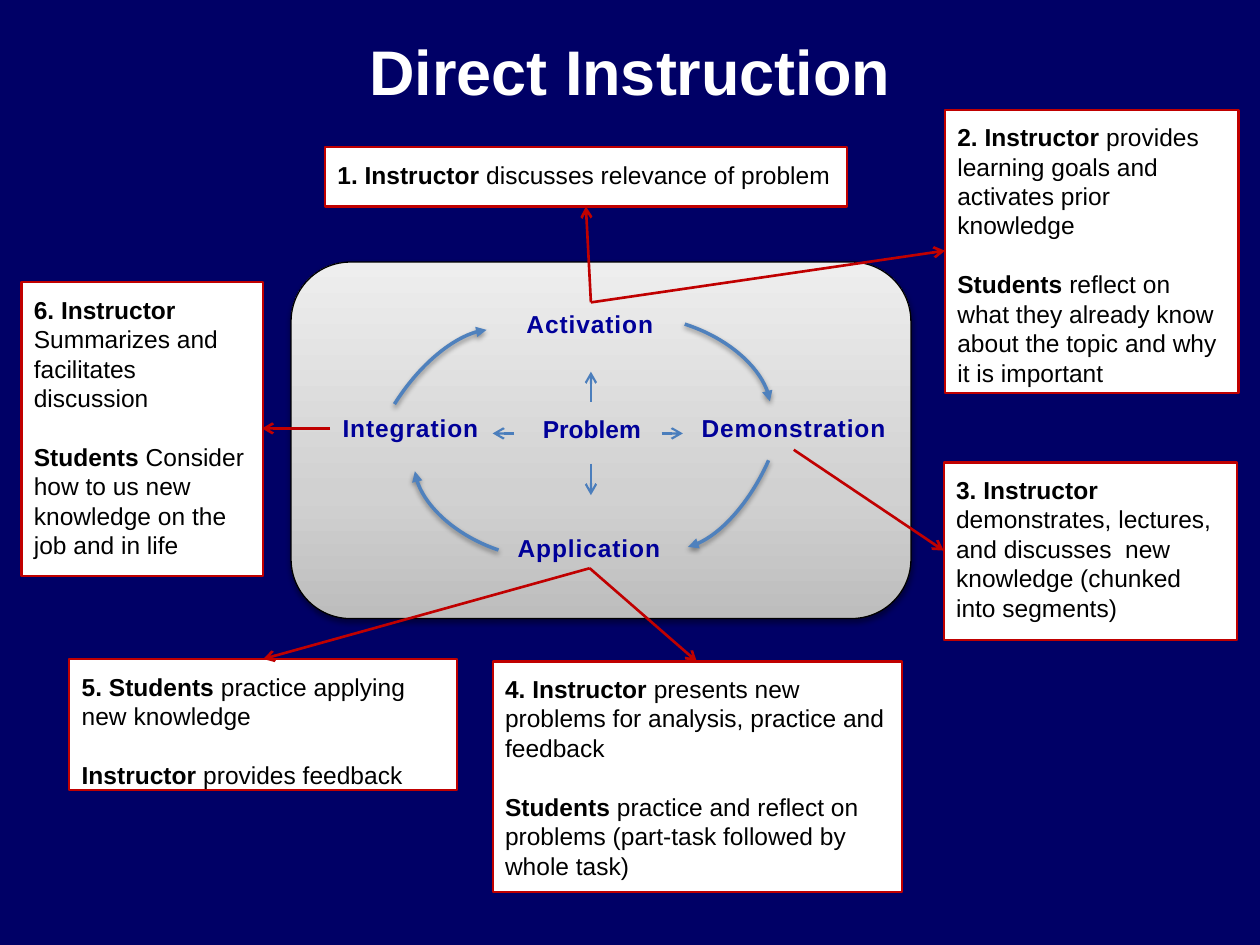
from pptx import Presentation
from pptx.dml.color import RGBColor
from pptx.enum.shapes import MSO_CONNECTOR as Connector, MSO_SHAPE as Shape
from pptx.enum.text import MSO_ANCHOR as Anchor, MSO_AUTO_SIZE as AutoSize, PP_ALIGN as Align
from pptx.oxml.ns import qn
from pptx.util import Inches, Pt
from lxml.etree import SubElement
from copy import deepcopy

NAVY = RGBColor(0x00, 0x00, 0x66)
WHITE = RGBColor(0xFF, 0xFF, 0xFF)
BLACK = RGBColor(0x00, 0x00, 0x00)
RED = RGBColor(0xC0, 0x00, 0x00)
LABEL_BLUE = RGBColor(0x00, 0x00, 0x99)
ARC_BLUE = RGBColor(0x4F, 0x81, 0xBD)
ARROW_BLUE = RGBColor(0x4B, 0x7E, 0xBC)
PANEL_STOPS = [
    (0, RGBColor(0xBD, 0xBD, 0xBD)),
    (0.35, RGBColor(0xD1, 0xD1, 0xD1)),
    (1, RGBColor(0xEE, 0xEE, 0xEE)),
]

STEPS = [
    ((2.58, 1.17, 4.14, 0.47), [("1. Instructor", " discusses relevance of problem")]),
    ((7.5, 0.87, 2.33, 2.25), [
        ("2. Instructor", " provides learning goals and activates prior knowledge"),
        ("Students", " reflect on what they already know about the topic and why it is important")]),
    ((0.17, 2.24, 1.92, 2.33), [
        ("6. Instructor", " Summarizes and facilitates discussion"),
        ("Students", " Consider how to us new knowledge on the job and in life")]),
    ((0.55, 5.23, 3.08, 1.04), [
        ("5. Students", " practice applying new knowledge"),
        ("Instructor", " provides feedback")]),
    ((3.91, 5.25, 3.25, 1.83), [
        ("4. Instructor", " presents new problems for analysis, practice and feedback"),
        ("Students", " practice and reflect on problems (part-task followed by whole task)")]),
    ((7.49, 3.67, 2.33, 1.41), [
        ("3. Instructor", " demonstrates, lectures, and discusses  new knowledge (chunked into segments)")]),
]
LABELS = [
    ("Problem", (4.21, 3.24, 0.98, 0.33), 0),
    ("Demonstration", (5.47, 3.23, 1.67, 0.34), 0.5),
    ("Application", (4.01, 4.18, 1.34, 0.34), 0.5),
    ("Activation", (4.08, 2.4, 1.22, 0.34), 0.5),
    ("Integration", (2.62, 3.23, 1.29, 0.34), 0.5),
]
ARCS = [
    ((4.54, 2.57, 1.61, 0.96), 21.6),
    ((4.79, 3.1, 1.77, 0.87), 116.5),
    ((3.25, 3.41, 1.61, 0.96), 202.7),
    ((2.65, 2.95, 1.77, 0.87), 304.7),
]
PROBLEM_ARROWS = [
    ((4.69, 3.19), (4.69, 2.95)),
    ((5.25, 3.44), (5.42, 3.44)),
    ((4.08, 3.44), (3.91, 3.44)),
    ((4.69, 3.68), (4.69, 3.93)),
]
STEP_ARROWS = [
    ((4.69, 2.4), (4.65, 1.64)),
    ((4.69, 2.4), (7.5, 1.99)),
    ((6.3, 3.57), (7.49, 4.37)),
    ((4.68, 4.51), (5.53, 5.25)),
    ((4.68, 4.51), (2.09, 5.23)),
    ((2.62, 3.4), (2.08, 3.4)),
]


def inches(values):
    return [Inches(value) for value in values]


def add_text(para, text, size=14, color=BLACK, bold=False, spacing=0):
    span = para.add_run()
    span.text = text
    span.font.name = "Arial"
    span.font.size = Pt(size)
    span.font.bold = bold
    span.font.color.rgb = color
    if spacing:
        span.font._element.set("spc", str(int(spacing * 100)))


def add_arrowhead(line, kind):
    SubElement(line._get_or_add_ln(), qn("a:tailEnd"), type=kind)


def add_outline_shape(page, kind, bounds, color, width):
    shape = page.shapes.add_shape(kind, *inches(bounds))
    shape.shadow.inherit = False
    shape.line.color.rgb = color
    shape.line.width = Pt(width)
    return shape


def add_soft_shadow(shape):
    effects = shape._element.spPr.find(qn("a:effectLst"))
    shadow = SubElement(effects, qn("a:outerShdw"), blurRad=str(Pt(3.1)),
                        dist=str(Pt(1.6)), dir="5400000", rotWithShape="0")
    color = SubElement(shadow, qn("a:srgbClr"), val=str(BLACK))
    SubElement(color, qn("a:alpha"), val="38000")


def add_title(page):
    frame = page.shapes.add_textbox(*inches((0.5, 0.08, 9, 0.95))).text_frame
    frame.word_wrap = True
    frame.vertical_anchor = Anchor.MIDDLE
    para = frame.paragraphs[0]
    para.alignment = Align.CENTER
    add_text(para, "Direct Instruction", size=36, color=WHITE, bold=True)


def add_step(page, bounds, roles):
    box = add_outline_shape(page, Shape.RECTANGLE, bounds, RED, 1.25)
    box.fill.solid()
    box.fill.fore_color.rgb = WHITE
    frame = box.text_frame
    frame.word_wrap = True
    frame.vertical_anchor = Anchor.TOP
    frame.margin_left = frame.margin_right = Inches(0.1)
    frame.margin_top = frame.margin_bottom = Inches(0.1)
    for index, (role, action) in enumerate(roles):
        para = frame.add_paragraph() if index else frame.paragraphs[0]
        para.alignment = Align.LEFT
        para.space_before = Pt(16.8 if index else 0)
        add_text(para, role, bold=True)
        add_text(para, action)


def add_panel(page):
    panel = add_outline_shape(page, Shape.ROUNDED_RECTANGLE, (2.31, 2.08, 4.92, 2.83), BLACK, 0.75)
    panel.fill.gradient()
    panel.fill.gradient_angle = 90
    stop_list = panel._element.spPr.find(qn("a:gradFill")).find(qn("a:gsLst"))
    stop_list.append(deepcopy(stop_list[0]))
    for stop, (position, color) in zip(panel.fill.gradient_stops, PANEL_STOPS):
        stop.position = position
        stop.color.rgb = color
    add_soft_shadow(panel)


def add_label(page, text, bounds, spacing):
    frame = page.shapes.add_textbox(*inches(bounds)).text_frame
    frame.word_wrap = False
    frame.auto_size = AutoSize.SHAPE_TO_FIT_TEXT
    add_text(frame.paragraphs[0], text, color=LABEL_BLUE, bold=True, spacing=spacing)


def add_arc(page, bounds, rotation):
    arc = add_outline_shape(page, Shape.ARC, bounds, ARC_BLUE, 2)
    arc.fill.background()
    arc.rotation = rotation
    arc.adjustments[0] = 155.43
    arc.adjustments[1] = 209.06
    add_arrowhead(arc.line, "triangle")
    add_soft_shadow(arc)


def add_arrow(page, start, end, color, width):
    arrow = page.shapes.add_connector(Connector.STRAIGHT, *inches(start + end))
    arrow.line.color.rgb = color
    arrow.line.width = Pt(width)
    add_arrowhead(arrow.line, "arrow")
    SubElement(arrow._element.spPr, qn("a:effectLst"))


def main():
    deck = Presentation()
    deck.slide_width, deck.slide_height = inches((10, 7.5))
    page = deck.slides.add_slide(deck.slide_layouts[6])
    page.background.fill.solid()
    page.background.fill.fore_color.rgb = NAVY
    add_title(page)
    add_panel(page)
    for bounds, roles in STEPS:
        add_step(page, bounds, roles)
    for text, bounds, spacing in LABELS:
        add_label(page, text, bounds, spacing)
    for bounds, rotation in ARCS:
        add_arc(page, bounds, rotation)
    for start, end in PROBLEM_ARROWS:
        add_arrow(page, start, end, ARROW_BLUE, 1.25)
    for start, end in STEP_ARROWS:
        add_arrow(page, start, end, RED, 1.5)
    deck.save("out.pptx")


if __name__ == "__main__":
    main()
